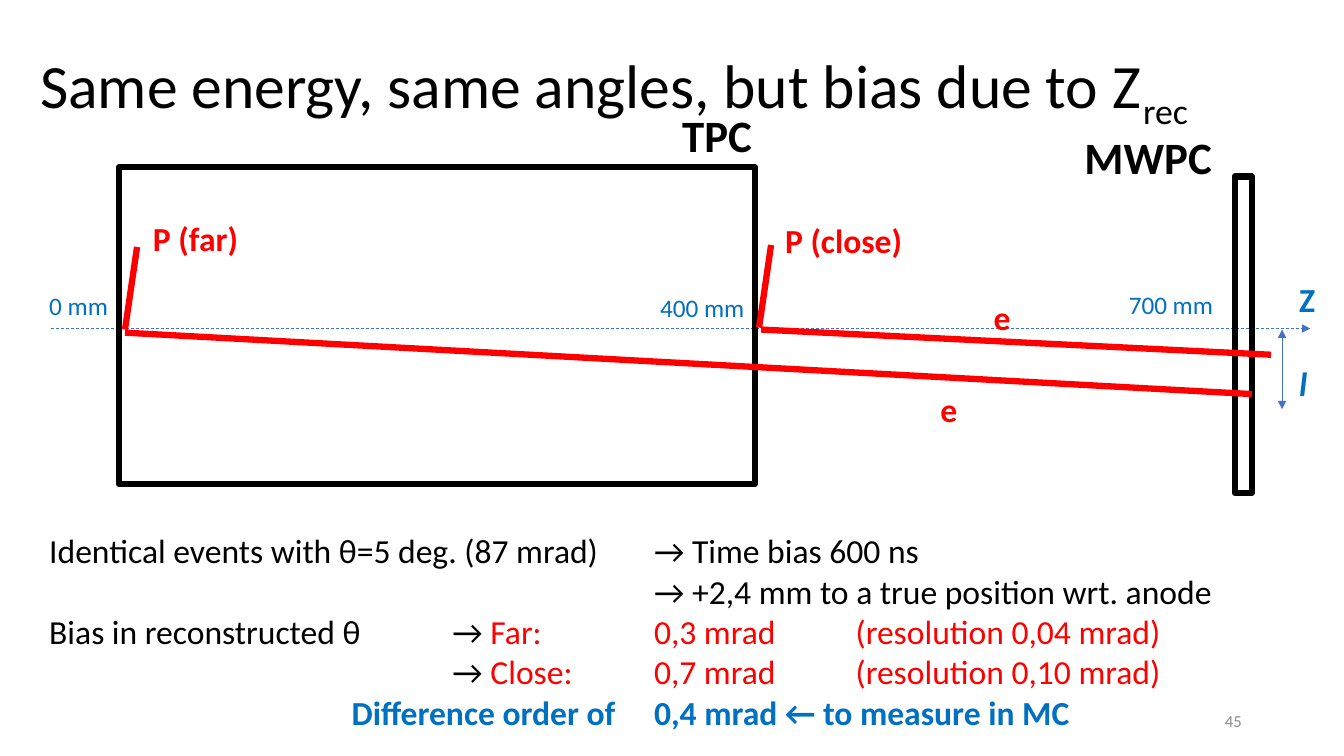
from lxml import etree
from pptx import Presentation
from pptx.dml.color import RGBColor
from pptx.enum import dml, shapes, text
from pptx.oxml import ns
from pptx.util import Pt

COLORS = {"black": "000000", "red": "FF0000", "blue": "0070C0",
          "axis": "4472C4", "gray": "8C8C8C"}

prs = Presentation()
prs.slide_width, prs.slide_height = Pt(960), Pt(540)
s = prs.slides.add_slide(prs.slide_layouts[6])


def add_text(p, content, size=24, color="black", bold=False, italic=False, baseline=None):
    r = p.add_run()
    r.text = content
    r.font.name = "Calibri"
    r.font.size = Pt(size)
    r.font.bold = bold
    r.font.italic = italic
    r.font.color.rgb = RGBColor.from_string(COLORS[color])
    if baseline:
        r._r.get_or_add_rPr().set("baseline", str(baseline))


def add_line(x1, y1, x2, y2, color="red", width=4.5, arrows=()):
    c = s.shapes.add_connector(shapes.MSO_CONNECTOR.STRAIGHT, Pt(x1), Pt(y1), Pt(x2), Pt(y2))
    c.line.color.rgb = RGBColor.from_string(COLORS[color])
    c.line.width = Pt(width)
    if color == "axis" and y1 == y2:
        c.line.dash_style = dml.MSO_LINE.DASH
    for end in arrows:
        etree.SubElement(c.line._get_or_add_ln(), ns.qn("a:" + end), type="triangle")
    etree.SubElement(c._element.spPr, ns.qn("a:effectLst"))


add_line(36.7, 234.7, 936, 234.7, "axis", 0.5, ["tailEnd"])

for x, y, w in [(85, 119.5, 454.3), (882, 126, 12.2)]:
    sp = s.shapes.add_shape(shapes.MSO_SHAPE.RECTANGLE, Pt(x), Pt(y), Pt(w), Pt(226))
    sp.shadow.inherit = False
    sp.fill.background()
    sp.line.color.rgb = RGBColor.from_string(COLORS["black"])
    sp.line.width = Pt(4.5)

for track in [(89.3, 235.4, 97.9, 176.4), (542.2, 234, 550.8, 175),
              (89.3, 237.6, 894.2, 281.5), (543.6, 235.4, 907.9, 253.4)]:
    add_line(*track)
add_line(915.8, 235.4, 915.8, 292.3, "axis", 0.5, ["headEnd", "tailEnd"])

labels = [
    ("Z", 920.9, 195.8, 26, 36, dict(color="blue", bold=True)),
    ("l", 920.9, 255.6, 20, 36, dict(color="blue", bold=True, italic=True)),
    ("0 mm", 28.1, 203.8, 57, 29, dict(size=18, color="blue")),
    ("400 mm", 464.4, 205.2, 76, 29, dict(size=18, color="blue")),
    ("700 mm", 799.2, 203, 76, 29, dict(size=18, color="blue")),
    ("TPC", 480.2, 73.4, 65, 46, dict(size=32, bold=True)),
    ("MWPC", 767.5, 89.3, 140, 46, dict(size=32, bold=True)),
    ("P (far)", 102.2, 151.9, 76, 36, dict(color="red", bold=True)),
    ("P (close)", 553.7, 153.4, 99, 36, dict(color="red", bold=True)),
    ("e", 702.7, 208.8, 27, 36, dict(color="red", bold=True)),
    ("e", 664.6, 274.3, 27, 36, dict(color="red", bold=True)),
]
for content, x, y, w, h, style in labels:
    tf = s.shapes.add_textbox(Pt(x), Pt(y), Pt(w), Pt(h)).text_frame
    tf.word_wrap = content == "MWPC"
    add_text(tf.paragraphs[0], content, **style)

tf = s.shapes.add_textbox(Pt(21.6), Pt(9.4), Pt(886.3), Pt(104.4)).text_frame
tf.word_wrap = True
tf.vertical_anchor = text.MSO_ANCHOR.MIDDLE
p = tf.paragraphs[0]
p.line_spacing = 0.9
add_text(p, "Same energy, same angles, but bias due to Z", size=44)
add_text(p, "rec", size=44, baseline=-25000)

tf = s.shapes.add_textbox(Pt(678.2), Pt(500.4), Pt(216), Pt(28.8)).text_frame
tf.word_wrap = True
tf.vertical_anchor = text.MSO_ANCHOR.MIDDLE
p = tf.paragraphs[0]
p.alignment = text.PP_ALIGN.RIGHT
add_text(p, "45", size=12, color="gray")

results = [
    ([432], [("Identical events with θ=5 deg. (87 mrad)\t→ Time bias 600 ns", "black")]),
    ([432], [("\t→ +2,4 mm to a true position wrt. anode", "black")]),
    ([288, 432, 576], [("Bias in reconstructed θ\t→ ", "black"),
                       ("Far:\t0,3 mrad\t(resolution 0,04 mrad)", "red")]),
    ([288, 432, 576], [("\t→ ", "black"),
                       ("Close:\t0,7 mrad\t(resolution 0,10 mrad)", "red")]),
    ([216, 432], [("\tDifference order of\t0,4 mrad ← to measure in MC", "blue")]),
]
tf = s.shapes.add_textbox(Pt(28.1), Pt(375.1), Pt(895), Pt(152.6)).text_frame
tf.word_wrap = True
for i, (stops, runs) in enumerate(results):
    p = tf.add_paragraph() if i else tf.paragraphs[0]
    tabs = etree.SubElement(p._p.get_or_add_pPr(), ns.qn("a:tabLst"))
    for stop in stops:
        etree.SubElement(tabs, ns.qn("a:tab"), pos=str(Pt(stop)), algn="l")
    for content, color in runs:
        add_text(p, content, color=color, bold=color == "blue")

prs.save("out.pptx")
